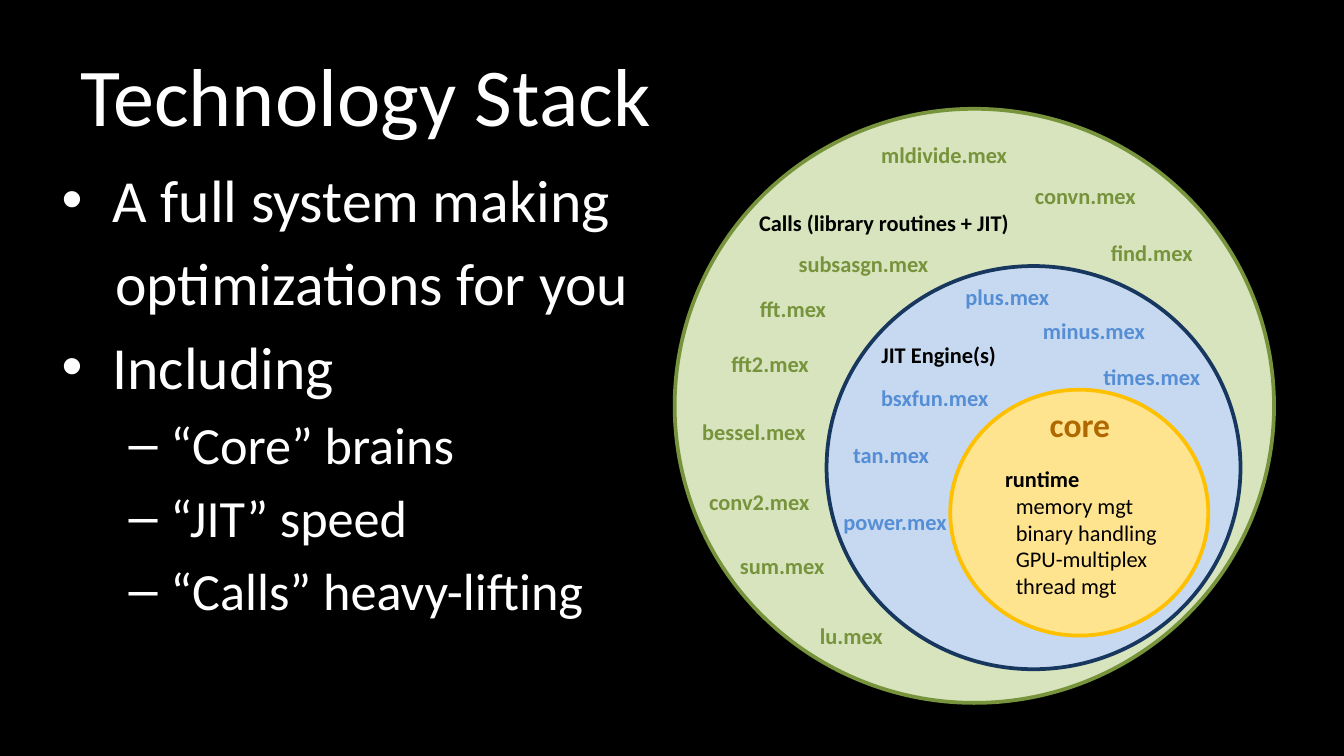
from pptx import Presentation
from pptx.dml.color import RGBColor
from pptx.enum.shapes import MSO_SHAPE
from pptx.enum.text import MSO_ANCHOR, MSO_AUTO_SIZE, PP_ALIGN
from pptx.oxml.ns import qn
from pptx.util import Inches, Pt
from lxml.etree import SubElement

THEME = {
    "font": "Calibri",
    "background": "000000", "light": "FFFFFF", "dark": "000000",
    "calls_fill": "D7E4BD", "calls": "77933C",
    "jit_fill": "C6D9F1", "jit_line": "17375E", "jit": "558ED5",
    "core_fill": "FFE48F", "core_line": "FFC000", "core": "B06900",
    "title_size": 44, "body_size": 32, "sub_size": 28, "core_size": 18, "label_size": 12,
}


def style_paragraph(paragraph, text, size, color, bold=False, alignment=PP_ALIGN.LEFT):
    paragraph.text = text
    paragraph.alignment = alignment
    paragraph.font.color.rgb = RGBColor.from_string(THEME[color])
    font_format = {"name": THEME["font"], "size": Pt(THEME[size]), "bold": bold}
    for name, value in font_format.items():
        setattr(paragraph.font, name, value)


def add_label(shapes, box, text, size, color, alignment, wrap=True):
    label = shapes.add_textbox(*map(Inches, box))
    label.text_frame.word_wrap = wrap
    label.text_frame.auto_size = MSO_AUTO_SIZE.SHAPE_TO_FIT_TEXT
    style_paragraph(label.text_frame.paragraphs[0], text, size, color, True, alignment)
    return label


presentation = Presentation()
presentation.slide_width = Inches(10)
presentation.slide_height = Inches(10) * 9 // 16
slide = presentation.slides.add_slide(presentation.slide_layouts[5])
slide.background.fill.solid()
slide.background.fill.fore_color.rgb = RGBColor.from_string(THEME["background"])

title = slide.shapes.title
title_place = {"left": 0.5, "top": 0.23, "width": 9, "height": 0.94}
for name, value in title_place.items():
    setattr(title, name, Inches(value))
title.text_frame.vertical_anchor = MSO_ANCHOR.MIDDLE
style_paragraph(title.text_frame.paragraphs[0], "Technology Stack", "title_size", "light")

body = slide.shapes.add_textbox(Inches(0.36), Inches(1.16), Inches(9.17), Inches(4.32))
body.text_frame.word_wrap = True
body_lines = [
    ("A full system making", 0, "•", 0.38, -0.38),
    ("optimizations for you", 0, None, 0.4, 0),
    ("Including", 0, "•", 0.38, -0.38),
    ("“Core” brains", 1, "–", 0.81, -0.31),
    ("“JIT” speed", 1, "–", 0.81, -0.31),
    ("“Calls” heavy-lifting", 1, "–", 0.81, -0.31),
]
for index, (text, level, bullet, margin, indent) in enumerate(body_lines):
    paragraph = body.text_frame.add_paragraph() if index else body.text_frame.paragraphs[0]
    size = "sub_size" if level else "body_size"
    paragraph.level = level
    if index:
        paragraph.space_before = Pt(THEME[size] * 0.2)
    properties = paragraph._p.get_or_add_pPr()
    properties.set("marL", str(Inches(margin)))
    properties.set("indent", str(Inches(indent)))
    if bullet:
        SubElement(properties, qn("a:buFont"), typeface="Arial")
        SubElement(properties, qn("a:buChar"), char=bullet)
    style_paragraph(paragraph, text, size, "light")

diagram = slide.shapes.add_group_shape().shapes
rings = [
    ((5.02, 0.81, 4.46, 4.42), "calls_fill", "calls"),
    ((6.15, 1.98, 3.08, 3), "jit_fill", "jit_line"),
    ((7.07, 2.9, 1.92, 1.83), "core_fill", "core_line"),
]
for box, fill, line in rings:
    ring = diagram.add_shape(MSO_SHAPE.OVAL, *map(Inches, box))
    ring.shadow.inherit = False
    ring.fill.solid()
    ring.fill.fore_color.rgb = RGBColor.from_string(THEME[fill])
    ring.line.color.rgb = RGBColor.from_string(THEME[line])
    ring.line.width = Pt(2)

runtime = add_label(diagram, (7.38, 3.41, 1.33, 1.11), "runtime", "label_size", "dark",
                    PP_ALIGN.JUSTIFY, wrap=False)
for duty in ["memory mgt", "binary handling", "GPU-multiplex", "thread mgt"]:
    paragraph = runtime.text_frame.add_paragraph()
    paragraph._p.get_or_add_pPr().set("marL", str(Inches(0.08)))
    style_paragraph(paragraph, duty, "label_size", "dark", alignment=PP_ALIGN.JUSTIFY)

add_label(diagram, (7.71, 2.96, 0.65, 0.4), "core", "core_size", "core",
          PP_ALIGN.CENTER, wrap=False)

ring_names = [
    ("JIT Engine(s)", 6.46, 2.49, 1.06),
    ("Calls (library routines + JIT)", 5.55, 1.51, 2.7),
]
for text, left, top, width in ring_names:
    add_label(diagram, (left, top, width, 0.3), text, "label_size", "dark", PP_ALIGN.JUSTIFY)

routines = {
    "jit": [
        ("plus", 7.07, 2.06, 0.85),
        ("minus", 7.57, 2.31, 1.14),
        ("bsxfun", 6.42, 2.81, 1.07),
        ("tan", 6.17, 3.23, 0.92),
        ("times", 8.07, 2.65, 1),
        ("power", 6.12, 3.73, 1.08),
    ],
    "calls": [
        ("fft", 5.44, 2.15, 0.92),
        ("fft2", 5.27, 2.56, 0.92),
        ("bessel", 5.11, 3.06, 1),
        ("conv2", 5.13, 3.58, 1.04),
        ("convn", 7.58, 1.31, 0.99),
        ("find", 8.11, 1.73, 0.92),
        ("sum", 5.36, 4.06, 0.92),
        ("subsasgn", 5.82, 1.81, 1.21),
        ("mldivide", 6.44, 1, 1.17),
        ("lu", 5.75, 4.58, 1.17),
    ],
}
for color, entries in routines.items():
    for routine, left, top, width in entries:
        add_label(diagram, (left, top, width, 0.3), f"{routine}.mex", "label_size", color,
                  PP_ALIGN.CENTER)

presentation.save("out.pptx")
